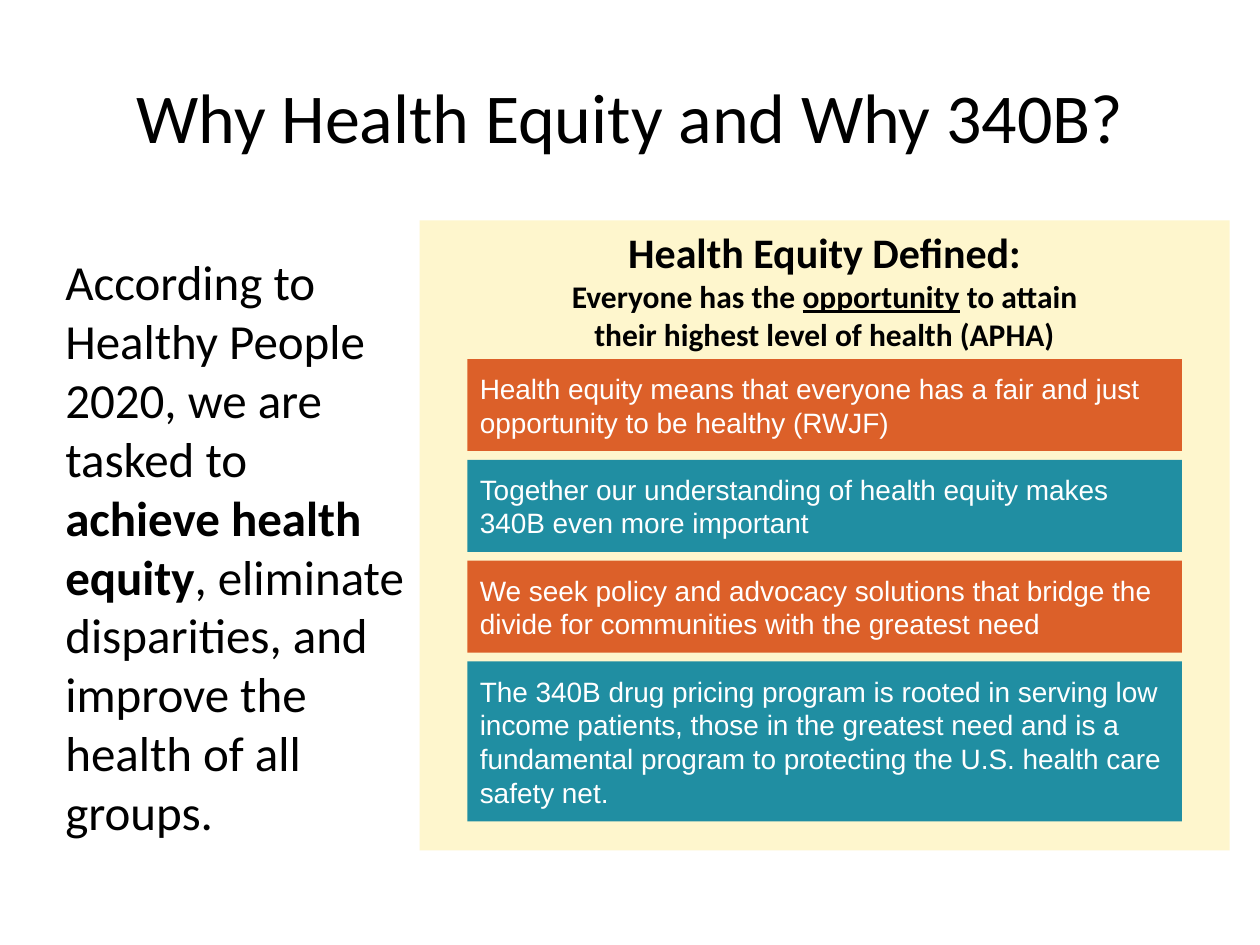
from typing import NamedTuple

from pptx import Presentation
from pptx.dml.color import RGBColor
from pptx.enum.shapes import MSO_SHAPE
from pptx.enum.text import MSO_ANCHOR, PP_ALIGN
from pptx.util import Inches, Pt

RECT = MSO_SHAPE.RECTANGLE
TOP, MID = MSO_ANCHOR.TOP, MSO_ANCHOR.MIDDLE
LEFT, CENTER = PP_ALIGN.LEFT, PP_ALIGN.CENTER
BLACK, WHITE, CREAM = "000000", "FFFFFF", "FEF6CD"
ORANGE, TEAL = "DC6029", "208EA2"


class Run(NamedTuple):
    text: str
    bold: bool = False
    under: bool = False


class Bar(NamedTuple):
    text: str
    fill: str
    high: float = 0.73


BARS = [
    Bar("Health equity means that everyone has a fair and just "
        "opportunity to be healthy (RWJF)", ORANGE),
    Bar("Together our understanding of health equity makes "
        "340B even more important", TEAL),
    Bar("We seek policy and advocacy solutions that bridge the divide "
        "for communities with the greatest need", ORANGE),
    Bar("The 340B drug pricing program is rooted in serving low income "
        "patients, those in the greatest need and is a fundamental program "
        "to protecting the U.S. health care safety net.", TEAL, 1.27),
]
BAR_TOP, BAR_GAP = 2.85, 0.07


def color(code: str) -> RGBColor:
    return RGBColor.from_string(code)


def write(para, runs: list[Run], *, size: float, font: str = "Calibri",
          ink: str = BLACK, align=LEFT) -> None:
    """Fill a paragraph; a newline in a run becomes a line break."""
    para.alignment = align
    for item in runs:
        for i, line in enumerate(item.text.split("\n")):
            if i:
                para.add_line_break()
            run = para.add_run()
            run.text = line
            face = run.font
            face.name, face.size = font, Pt(size)
            face.bold, face.underline = item.bold, item.under
            face.color.rgb = color(ink)


def block(slide, x: float, y: float, wide: float, high: float,
          fill: str, anchor=TOP):
    """Add a plain filled rectangle and return its text frame."""
    shape = slide.shapes.add_shape(
        RECT, Inches(x), Inches(y), Inches(wide), Inches(high))
    shape.shadow.inherit = False
    shape.fill.solid()
    shape.fill.fore_color.rgb = color(fill)
    shape.line.fill.background()
    frame = shape.text_frame
    frame.word_wrap = True
    frame.vertical_anchor = anchor
    return frame


def main() -> None:
    deck = Presentation()
    deck.slide_width, deck.slide_height = Inches(10), Inches(7.5)
    slide = deck.slides.add_slide(deck.slide_layouts[5])

    # Title
    title = slide.shapes.title
    title.left, title.top = Inches(0.5), Inches(0.33)
    title.width, title.height = Inches(9), Inches(1.17)
    title.text_frame.vertical_anchor = MID
    write(title.text_frame.paragraphs[0],
          [Run("Why Health Equity and Why 340B?")], size=40, align=CENTER)

    # Definition panel
    panel = block(slide, 3.33, 1.75, 6.43, 5, CREAM)
    write(panel.paragraphs[0], [Run("Health Equity Defined:", bold=True)],
          size=24, align=CENTER)
    write(panel.add_paragraph(),
          [Run("Everyone has the ", bold=True),
           Run("opportunity", bold=True, under=True),
           Run(" to attain\ntheir highest level of health (APHA)", bold=True)],
          size=18, align=CENTER)

    # Goal statement on the left
    goal = slide.shapes.add_textbox(
        Inches(0.42), Inches(1.95), Inches(2.92), Inches(4.44)).text_frame
    goal.word_wrap = True
    write(goal.paragraphs[0],
          [Run("According to Healthy People 2020, we are tasked to "),
           Run("achieve health equity", bold=True),
           Run(", eliminate disparities, and improve the health of "
               "all groups.")],
          size=28)

    # Stacked bars
    y = BAR_TOP
    for bar in BARS:
        frame = block(slide, 3.71, y, 5.67, bar.high, bar.fill, MID)
        frame.margin_top = frame.margin_bottom = Inches(0.1)
        write(frame.paragraphs[0], [Run(bar.text)], size=16, font="Arial",
              ink=WHITE)
        y += bar.high + BAR_GAP

    deck.save("out.pptx")


if __name__ == "__main__":
    main()
